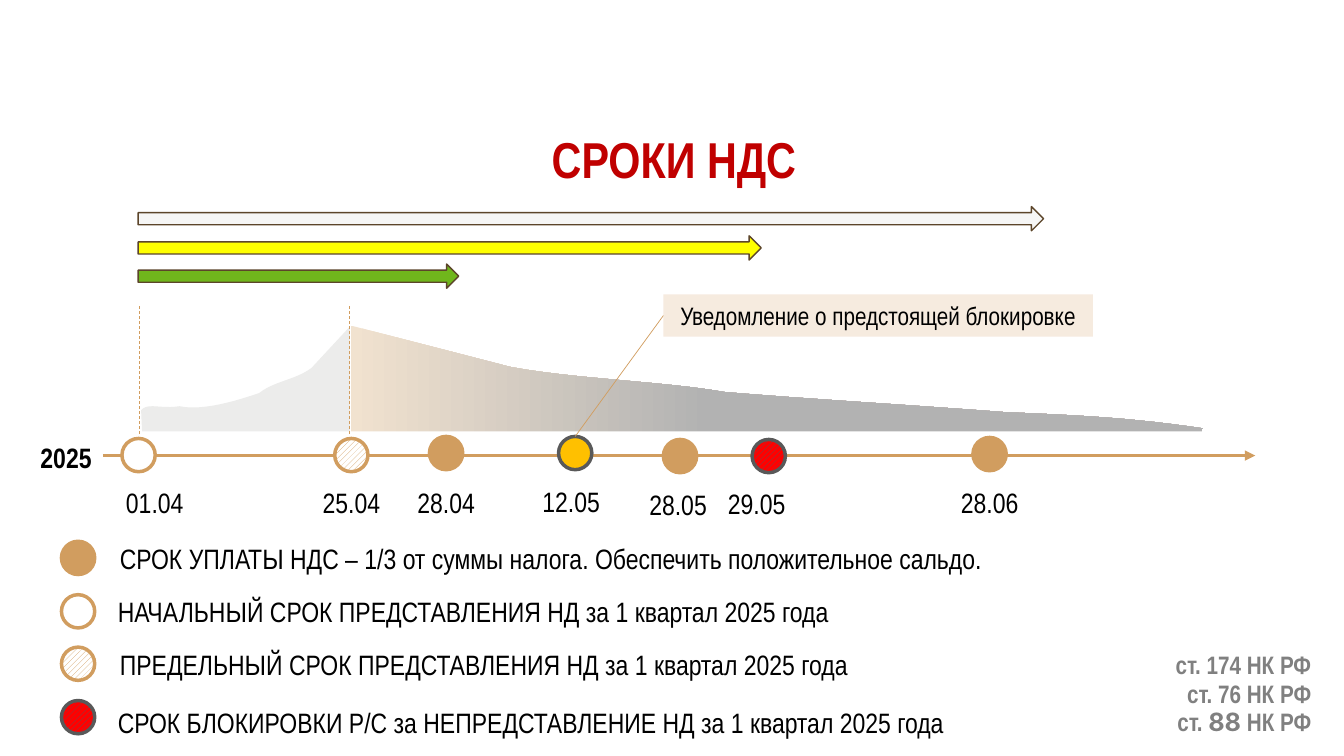
from lxml.etree import SubElement
from pptx import Presentation
from pptx.dml.color import RGBColor
from pptx.enum.dml import MSO_LINE, MSO_PATTERN
from pptx.enum.shapes import MSO_CONNECTOR, MSO_SHAPE
from pptx.enum.text import MSO_ANCHOR, PP_ALIGN
from pptx.oxml.ns import qn
from pptx.util import Emu, Pt

PX = 9144  # EMU in one px, 100 px to the inch
FONT = "Arial Narrow"
TAN, DARK, WHITE, RED, GREY = "D19D5F", "595959", "FFFFFF", "FF0000", "B2B2B2"
BLACK, BROWN = "000000", "5C452A"
LEFT, CENTER, RIGHT = PP_ALIGN.LEFT, PP_ALIGN.CENTER, PP_ALIGN.RIGHT

# Marker styles: fill, outline, hatch colour
PAY = (TAN, TAN, None)
START = (WHITE, TAN, None)
LIMIT = (WHITE, TAN, TAN)
NOTICE = ("FFC000", DARK, None)
BLOCK = (RED, DARK, DARK)


def rgb(value):
    return RGBColor.from_string(value)


def bezier(a, b, c, d, steps=12):
    for i in range(1, steps + 1):
        t = i / steps
        u = 1 - t
        yield tuple(u**3 * p + 3 * u * u * t * q + 3 * u * t * t * r + t**3 * s
                    for p, q, r, s in zip(a, b, c, d))


class Canvas:
    def __init__(self, slide, font):
        self.shapes, self.font = slide.shapes, font

    def box(self, *lengths):
        return [Emu(v * PX) for v in lengths]

    def put_runs(self, sp, runs, size, color, align, bold=False):
        p = sp.text_frame.paragraphs[0]
        p.alignment = align
        f = p.font
        f.size, f.bold, f.name = Pt(size), bold, self.font
        f.color.rgb = rgb(color)
        for text, name in runs:
            r = p.add_run()
            r.text = text
            if name:
                r.font.name = name
        return p

    def text(self, x, y, w, h, text, size=20, color=BLACK, align=LEFT,
             bold=False, wrap=True):
        sp = self.shapes.add_textbox(*self.box(x, y, w, h))
        sp.text_frame.word_wrap = wrap
        runs = [(text, None)] if isinstance(text, str) else text
        return self.put_runs(sp, runs, size, color, align, bold)

    def shape(self, kind, x, y, w, h, fill, line=None, width=1.0):
        sp = self.shapes.add_shape(kind, *self.box(x, y, w, h))
        sp.shadow.inherit = False
        sp.fill.solid()
        sp.fill.fore_color.rgb = rgb(fill)
        if line:
            sp.line.color.rgb = rgb(line)
            sp.line.width = Pt(width)
        else:
            sp.line.fill.background()
        return sp

    def marker(self, x, y, style):
        fill, line, hatch = style
        sp = self.shape(MSO_SHAPE.OVAL, x, y, 33, 33, fill, line, 2.5)
        if hatch:
            sp.fill.patterned()
            sp.fill.pattern = MSO_PATTERN.WIDE_UPWARD_DIAGONAL
            sp.fill.fore_color.rgb = rgb(hatch)
            sp.fill.back_color.rgb = rgb(fill)
        return sp

    def line(self, x1, y1, x2, y2, width, dash=False, arrow=False):
        cx = self.shapes.add_connector(MSO_CONNECTOR.STRAIGHT,
                                       *self.box(x1, y1, x2, y2))
        cx.line.color.rgb = rgb(TAN)
        cx.line.width = Pt(width)
        if dash:
            cx.line.dash_style = MSO_LINE.DASH
        props = cx.element.spPr
        if arrow:
            SubElement(props.find(qn("a:ln")), qn("a:tailEnd"), type="triangle")
        SubElement(props, qn("a:effectLst"))
        return cx

    def area(self, start, segments, fill, fade_from=None, fade_end=100):
        points = [start]
        for seg in segments:
            points += bezier(points[-1], *seg) if len(seg) == 3 else seg
        points = [(x * PX, y * PX) for x, y in points]
        fb = self.shapes.build_freeform(*points[0], scale=1.0)
        fb.add_line_segments(points[1:], close=True)
        sp = fb.convert_to_shape()
        sp.shadow.inherit = False
        sp.line.fill.background()
        if fade_from:
            sp.fill.gradient()
            sp.fill.gradient_angle = 0
            stops = zip(sp.fill.gradient_stops, (fade_from, fill), (0, fade_end))
            for stop, color, at in stops:
                stop.color.rgb = rgb(color)
                stop.position = at / 100
        else:
            sp.fill.solid()
            sp.fill.fore_color.rgb = rgb(fill)


def main():
    prs = Presentation()
    prs.slide_width, prs.slide_height = Emu(1333 * PX), Emu(750 * PX)
    s = Canvas(prs.slides.add_slide(prs.slide_layouts[6]), FONT)

    # Title
    p = s.text(77, 129, 1183, 127, "СРОКИ НДС", 36, "C00000", CENTER, True)
    p.line_spacing = 0.9

    # Legend
    for x, y, marker_y, style, label in (
        (109, 532, 537, PAY,
         "СРОК УПЛАТЫ НДС – 1/3 от суммы налога. Обеспечить положительное сальдо."),
        (107, 585, 590, START,
         "НАЧАЛЬНЫЙ СРОК ПРЕДСТАВЛЕНИЯ НД за 1 квартал 2025 года"),
        (109, 637, 642, LIMIT,
         "ПРЕДЕЛЬНЫЙ СРОК ПРЕДСТАВЛЕНИЯ НД за 1 квартал 2025 года"),
        (107, 695, 695, BLOCK,
         "СРОК БЛОКИРОВКИ Р/С за НЕПРЕДСТАВЛЕНИЕ НД за 1 квартал 2025 года"),
    ):
        s.marker(61, marker_y, style)
        s.text(x, y, 1133, 44, label)

    # Rising and falling areas, cut off by a white band above the axis
    s.area((1193, 425), [
        [(1126, 415), (1074, 412), (998, 409)],
        [(892, 401), (804, 396), (719, 389)],
        [(656, 378), (569, 376), (506, 364)],
        [(348, 323)], [(348, 451)], [(1187, 451)],
    ], GREY, fade_from="F1E2CF", fade_end=42)
    s.area((140, 407), [
        [(147, 399), (159, 406), (178, 403)],
        [(202, 408), (236, 397), (257, 390)],
        [(272, 378), (293, 377), (309, 365)],
        [(347, 324)], [(347, 452)], [(142, 452)],
    ], "ECECEB")
    s.shape(MSO_SHAPE.RECTANGLE, 138, 428, 1058, 56, WHITE)

    # Time axis with guides
    s.line(102, 452, 1245, 452, 2.5, arrow=True)
    s.text(30, 432, 71, 44, "2025", align=CENTER, bold=True, wrap=False)
    for x in (138, 347):
        s.line(x, 304, x, 432, 0.5, dash=True)

    # Dates on the axis
    markers = {}
    for date, x, y, style, label_x, label_y in (
        ("01.04", 121, 435, START, 100, 477),
        ("25.04", 332, 435, LIMIT, 295, 477),
        ("28.04", 426, 433, PAY, 389, 477),
        ("12.05", 554, 433, NOTICE, 513, 476),
        ("28.05", 658, 436, PAY, 619, 479),
        ("29.05", 746, 436, BLOCK, 697, 478),
        ("28.06", 965, 434, PAY, 928, 477),
    ):
        markers[date] = s.marker(x, y, style)
        s.text(label_x, label_y, 107, 44, date, align=CENTER)

    # Period arrows
    for y, w, fill in ((205, 898, "F6F6F5"), (234, 618, "FFFF00"),
                       (262, 318, "70B61C")):
        s.shape(MSO_SHAPE.RIGHT_ARROW, 137, y, w, 24, fill, BROWN)

    # Notice callout
    notice = s.shape(MSO_SHAPE.RECTANGLE, 658, 292, 426, 42, "F6EBDF")
    notice.text_frame.vertical_anchor = MSO_ANCHOR.MIDDLE
    s.put_runs(notice, [("Уведомление о предстоящей блокировке", None)],
               18, BLACK, CENTER)
    leader = s.line(658, 313, 570, 433, 0.5)
    leader.begin_connect(notice, 1)
    leader.end_connect(markers["12.05"], 0)

    # Tax code articles
    for y, article in (
        (639, "ст. 174 НК РФ "),
        (668, "ст. 76 НК РФ "),
        (696, [("ст. ", None), ("88", "Inter"), (" НК РФ ", None)]),
    ):
        s.text(1094, y, 222, 40, article, 18, "808080", RIGHT, True)

    prs.save("out.pptx")


if __name__ == "__main__":
    main()
